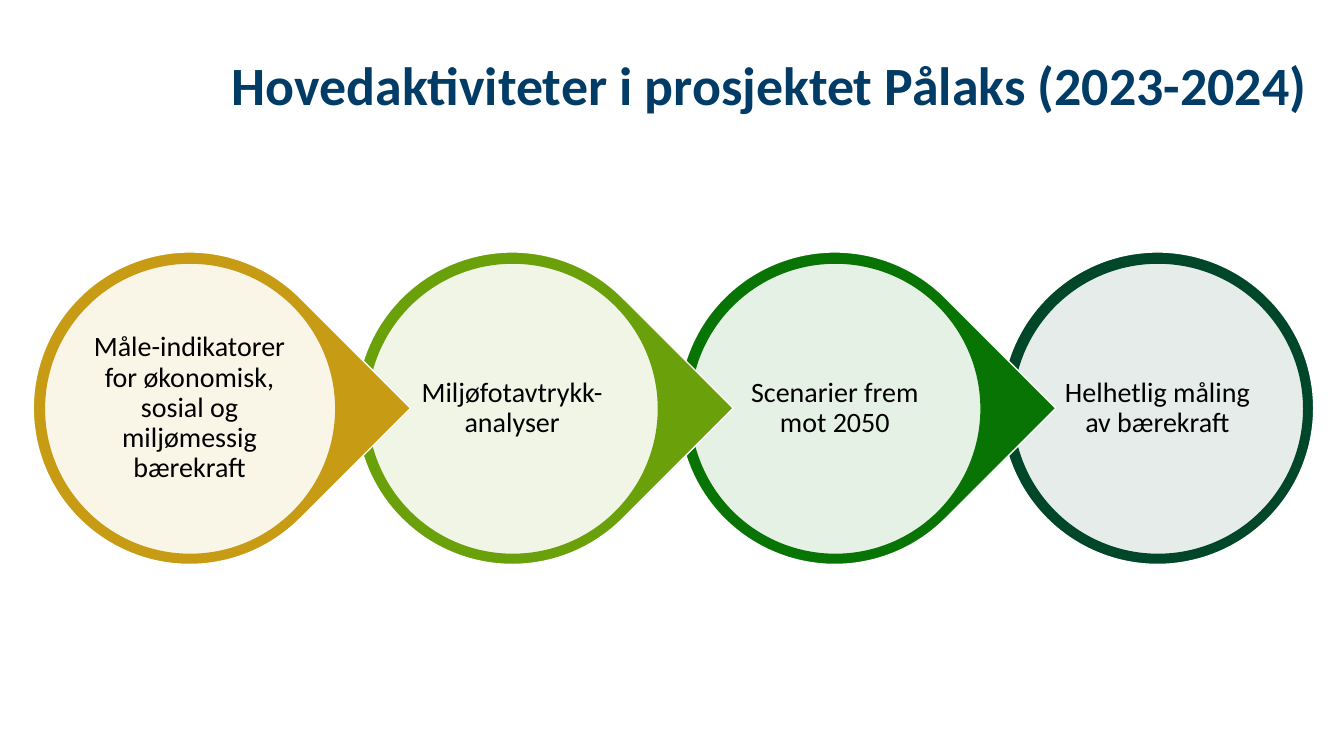
from pptx import Presentation
from pptx import util as u
from pptx.dml.color import RGBColor
from pptx.enum import shapes, text
from lxml import etree

PX = u.Inches(1) // 100
NAVY = RGBColor(0x00, 0x3C, 0x65)
GOLD = RGBColor(0xC8, 0x9B, 0x14)
LIME = RGBColor(0x6A, 0xA0, 0x0A)
GREEN = RGBColor(0x08, 0x74, 0x04)
FOREST = RGBColor(0x00, 0x46, 0x28)
WHITE = RGBColor(0xFF, 0xFF, 0xFF)
BLACK = RGBColor(0x00, 0x00, 0x00)
FONT = "Calibri"

TITLE = "Hovedaktiviteter i prosjektet Pålaks (2023-2024)"
ACTIVITIES = [
    ("Måle-indikatorer for økonomisk, sosial og miljømessig bærekraft", GOLD),
    ("Miljøfotavtrykk-analyser", LIME),
    ("Scenarier frem mot 2050", GREEN),
    ("Helhetlig måling av bærekraft", FOREST),
]
FIRST_CENTER, STEP, MIDDLE = 188, 320, 405
RING, DISC, LABEL = 310, 289, 206
DISC_OPACITY = 90


def square(center, size):
    return [v * PX for v in (center - size // 2, MIDDLE - size // 2, size, size)]


def add_outlined(page, kind, bounds, fill, line):
    shape = page.shapes.add_shape(kind, *bounds)
    shape.shadow.inherit = False
    shape.fill.solid()
    shape.fill.fore_color.rgb = fill
    shape.line.color.rgb = line
    shape.line.width = u.Pt(1)
    return shape


def set_opacity(shape, percent):
    color = shape.fill._xPr.find(".//{*}srgbClr")
    tag = etree.QName(color).namespace
    etree.SubElement(color, f"{{{tag}}}alpha", val=str(percent * 1000))


def add_text(page, bounds, words, size, color, anchor, align, inset=0, bold=False):
    box = page.shapes.add_textbox(*bounds)
    frame = box.text_frame
    frame.word_wrap = True
    frame.vertical_anchor = anchor
    frame.margin_left = frame.margin_right = inset * PX
    frame.margin_top = frame.margin_bottom = inset * PX
    para = frame.paragraphs[0]
    para.text = words
    para.alignment = align
    para.line_spacing = 0.9
    para.font.name = FONT
    para.font.size = u.Pt(size)
    para.font.bold = bold
    para.font.color.rgb = color


def add_activity(page, index):
    words, color = ACTIVITIES[index]
    center = FIRST_CENTER + index * STEP
    last = index == len(ACTIVITIES) - 1
    kind = shapes.MSO_SHAPE.OVAL if last else shapes.MSO_SHAPE.TEAR
    ring = add_outlined(page, kind, square(center, RING), color, WHITE)
    ring.rotation = 0 if last else 45
    disc = add_outlined(page, shapes.MSO_SHAPE.OVAL, square(center, DISC), WHITE, color)
    set_opacity(disc, DISC_OPACITY)
    add_text(page, square(center, LABEL), words, 20, BLACK,
             text.MSO_ANCHOR.MIDDLE, text.PP_ALIGN.CENTER, inset=3)


def main():
    deck = Presentation()
    deck.slide_width, deck.slide_height = 1333 * PX, 750 * PX
    page = deck.slides.add_slide(deck.slide_layouts[6])
    add_text(page, [v * PX for v in (230, 42, 1083, 74)], TITLE, 38.5, NAVY,
             text.MSO_ANCHOR.BOTTOM, text.PP_ALIGN.LEFT, bold=True)
    for index in reversed(range(len(ACTIVITIES))):
        add_activity(page, index)
    deck.save("out.pptx")


if __name__ == "__main__":
    main()
